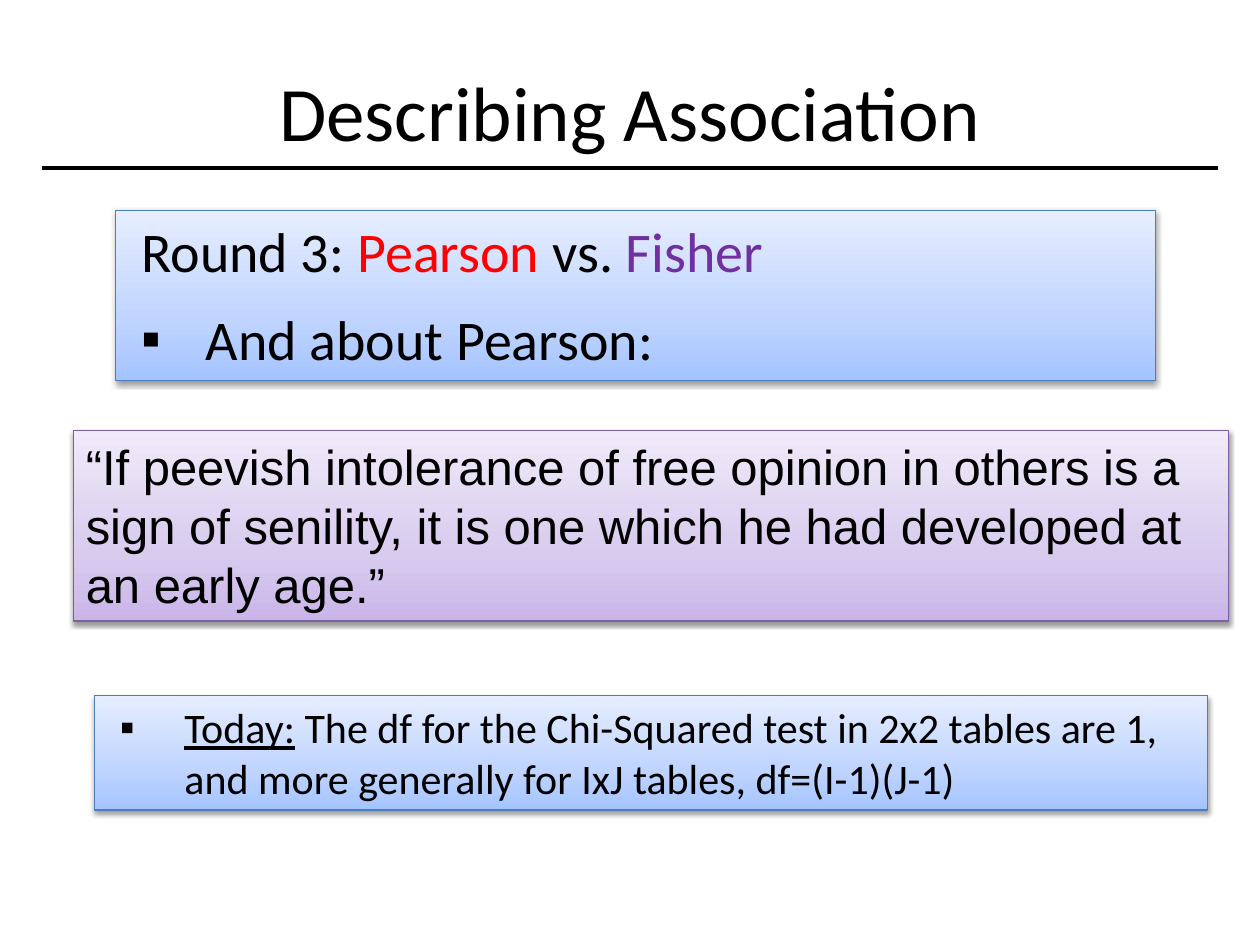
from lxml.etree import SubElement
from pptx import Presentation
from pptx.dml.color import RGBColor
from pptx.enum.shapes import MSO_CONNECTOR, MSO_SHAPE
from pptx.enum.text import MSO_ANCHOR, PP_ALIGN
from pptx.oxml.ns import qn
from pptx.util import Cm, Pt

BLACK = RGBColor(0x00, 0x00, 0x00)
RED = RGBColor(0xFF, 0x00, 0x00)
PURPLE = RGBColor(0x70, 0x30, 0xA0)
BLUE_EDGE = RGBColor(0x4B, 0x7E, 0xBC)
VIOLET_EDGE = RGBColor(0x7D, 0x60, 0xA0)
BLUE_STOPS = (RGBColor(0xA4, 0xC4, 0xFF), RGBColor(0xBF, 0xD4, 0xFF), RGBColor(0xE6, 0xEE, 0xFF))
VIOLET_STOPS = (RGBColor(0xC9, 0xB5, 0xE8), RGBColor(0xD8, 0xCB, 0xEE), RGBColor(0xF0, 0xEA, 0xF9))
STOP_POSITIONS = (0, 35, 100)

TITLE = "Describing Association"
# A paragraph is (layout, runs); a run is (text, colour, underlined).
PANELS = [
    {"at": (2.33, 4.24, 20.96, 3.43), "stops": BLUE_STOPS, "edge": BLUE_EDGE,
     "font": "Calibri", "size": 32, "before": 12,
     "paragraphs": [
         ("hanging", [("Round 3: ", BLACK, False), ("Pearson ", RED, False),
                      ("vs. ", BLACK, False), ("Fisher", PURPLE, False)]),
         ("bullet", [("And about Pearson:", BLACK, False)])]},
    {"at": (1.48, 8.68, 23.28, 3.84), "stops": VIOLET_STOPS, "edge": VIOLET_EDGE,
     "font": "Arial", "size": 28, "before": 0,
     "paragraphs": [
         ("plain", [("“If peevish intolerance of free opinion in others is a sign of senility, "
                     "it is one which he had developed at an early age.”", BLACK, False)])]},
    {"at": (1.9, 14.02, 22.44, 2.31), "stops": BLUE_STOPS, "edge": BLUE_EDGE,
     "font": "Calibri", "size": 24, "before": 6,
     "paragraphs": [
         ("bullet", [("Today:", BLACK, True),
                     (" The df for the Chi-Squared test in 2x2 tables are 1, and more "
                      "generally for IxJ tables, df=(I-1)(J-1)", BLACK, False)])]},
]


def add_run(para, text, font, size, colour, underlined=False):
    span = para.add_run()
    span.text = text
    span.font.name = font
    span.font.size = Pt(size)
    span.font.color.rgb = colour
    if underlined:
        span.font.underline = True


def add_element(parent, tag, **attributes):
    return SubElement(parent, qn(tag), {name: str(value) for name, value in attributes.items()})


def fill_upwards(box, colours):
    """Give the box a three-stop gradient that runs from bottom to top."""
    box.fill.gradient()
    gradient = box._element.spPr.find(qn("a:gradFill"))
    for child in list(gradient):
        gradient.remove(child)
    stops = add_element(gradient, "a:gsLst")
    for position, colour in zip(STOP_POSITIONS, colours):
        stop = add_element(stops, "a:gs", pos=position * 1000)
        add_element(stop, "a:srgbClr", val=colour)
    add_element(gradient, "a:lin", ang=270 * 60000, scaled=0)


def add_soft_shadow(box):
    box.shadow.inherit = False
    effects = box._element.spPr.find(qn("a:effectLst"))
    shadow = add_element(effects, "a:outerShdw", blurRad=Pt(3.1), dist=Pt(1.6),
                         dir=90 * 60000, rotWithShape=0)
    colour = add_element(shadow, "a:srgbClr", val=BLACK)
    add_element(colour, "a:alpha", val=38000)


def set_indent(para, layout):
    if layout == "plain":
        return
    properties = para._p.get_or_add_pPr()
    properties.set("marL", str(Cm(1.57)))
    properties.set("indent", str(Cm(-1.3)))
    if layout == "bullet":
        add_element(properties, "a:buFont", typeface="Arial")
        add_element(properties, "a:buChar", char="▪")


def add_title(page):
    box = page.shapes.add_textbox(Cm(1.27), Cm(0.64), Cm(22.86), Cm(3.18))
    box.text_frame.word_wrap = True
    box.text_frame.vertical_anchor = MSO_ANCHOR.MIDDLE
    para = box.text_frame.paragraphs[0]
    para.alignment = PP_ALIGN.CENTER
    add_run(para, TITLE, "Calibri", 44, BLACK)

    rule = page.shapes.add_connector(MSO_CONNECTOR.STRAIGHT, Cm(0.85), Cm(3.39), Cm(24.55), Cm(3.39))
    rule.line.color.rgb = BLACK
    rule.line.width = Pt(2)
    add_element(rule._element.spPr, "a:effectLst")


def add_panel(page, panel):
    box = page.shapes.add_shape(MSO_SHAPE.RECTANGLE, *map(Cm, panel["at"]))
    fill_upwards(box, panel["stops"])
    box.line.color.rgb = panel["edge"]
    box.line.width = Pt(0.75)
    add_soft_shadow(box)

    frame = box.text_frame
    frame.word_wrap = True
    frame.vertical_anchor = MSO_ANCHOR.TOP
    for index, (layout, runs) in enumerate(panel["paragraphs"]):
        para = frame.add_paragraph() if index else frame.paragraphs[0]
        para.alignment = PP_ALIGN.LEFT
        para.space_before = Pt(panel["before"])
        set_indent(para, layout)
        for text, colour, underlined in runs:
            add_run(para, text, panel["font"], panel["size"], colour, underlined)


def main():
    deck = Presentation()
    deck.slide_width, deck.slide_height = Cm(25.4), Cm(19.05)
    page = deck.slides.add_slide(deck.slide_layouts[6])
    add_title(page)
    for panel in PANELS:
        add_panel(page, panel)
    deck.save("out.pptx")


if __name__ == "__main__":
    main()
